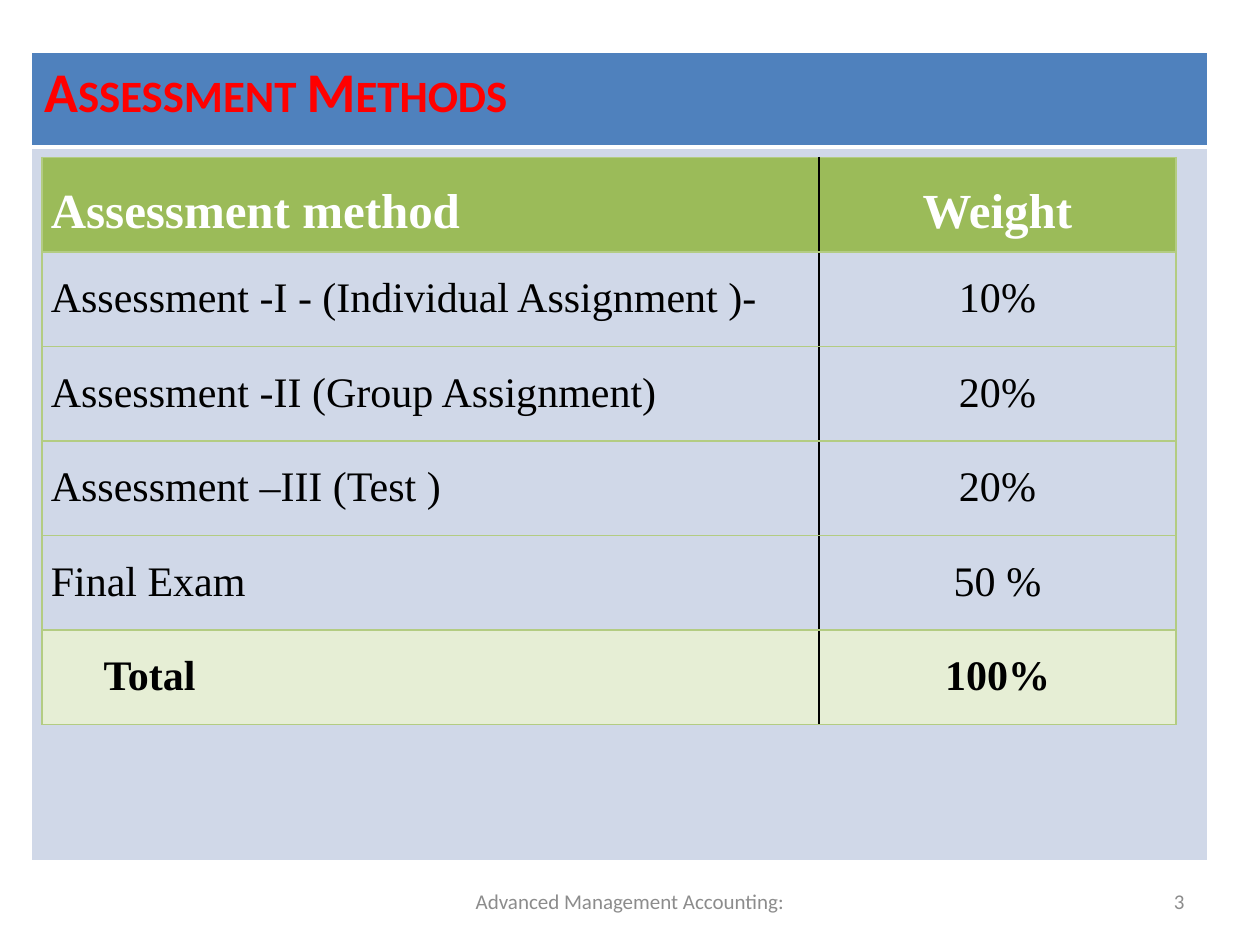
from collections import namedtuple

from lxml.etree import SubElement
from pptx import Presentation
from pptx.dml.color import RGBColor
from pptx.enum.text import MSO_ANCHOR as Anchor, PP_ALIGN as Align
from pptx.oxml.ns import qn
from pptx.util import Inches, Pt

WHITE = RGBColor(0xFF, 0xFF, 0xFF)
BLACK = RGBColor(0, 0, 0)
RED = RGBColor(0xFF, 0, 0)
GRAY = RGBColor(0x8C, 0x8C, 0x8C)
BLUE = RGBColor(0x4F, 0x81, 0xBD)
PALE_BLUE = RGBColor(0xD0, 0xD8, 0xE8)
GREEN = RGBColor(0x9B, 0xBB, 0x59)
PALE_GREEN = RGBColor(0xE6, 0xEE, 0xD5)
LINE_GREEN = RGBColor(0xB3, 0xCC, 0x82)

COLUMNS, ROWS = 120, 90
WIDTH, HEIGHT = Inches(10), Inches(7.5)
Box = namedtuple("Box", "left top width height")

WEIGHTS = [
    ("Assessment method", "Weight"),
    ("Assessment -I - (Individual Assignment )-", "10%"),
    ("Assessment -II (Group Assignment)", "20%"),
    ("Assessment –III (Test )", "20%"),
    ("Final Exam", "50 %"),
    ("Total", "100%"),
]


def across(columns):
    return round(WIDTH * columns / COLUMNS)


def down(rows):
    return round(HEIGHT * rows / ROWS)


def place(box):
    return across(box.left), down(box.top), across(box.width), down(box.height)


def write(frame, text, size=12, font="Calibri", color=BLACK, bold=False,
          align=Align.LEFT, spacing=None, indent=0, small_caps=False):
    paragraph = frame.paragraphs[0]
    paragraph.alignment = align
    paragraph.line_spacing = spacing
    if indent:
        paragraph._p.get_or_add_pPr().set("marL", str(Inches(indent)))
    run = paragraph.add_run()
    run.text = text
    run.font.size = Pt(size)
    run.font.name = font
    run.font.bold = bold
    run.font.color.rgb = color
    if small_caps:
        run.font._element.set("cap", "small")


def style_cell(cell, fill, borders):
    properties = cell._tc.get_or_add_tcPr()
    for side, (color, width) in zip("LRTB", borders):
        line = SubElement(properties, qn(f"a:ln{side}"), w=str(Pt(width)))
        solid = SubElement(line, qn("a:solidFill"))
        SubElement(solid, qn("a:srgbClr"), val=str(color))
    if fill is None:
        cell.fill.background()
    else:
        cell.fill.solid()
        cell.fill.fore_color.rgb = fill


def add_plain_table(slide, box, widths, heights):
    table = slide.shapes.add_table(len(heights), len(widths), *place(box)).table
    table.first_row = table.horz_banding = False
    for column, width in zip(table.columns, widths):
        column.width = across(width)
    for row, height in zip(table.rows, heights):
        row.height = down(height)
    return table


def add_title_panel(slide, box, title):
    title_height = 9
    table = add_plain_table(slide, box, [box.width],
                            [title_height, box.height - title_height])
    thin, thick = (WHITE, 1), (WHITE, 3)
    style_cell(table.cell(0, 0), BLUE, [thin, thin, thin, thick])
    style_cell(table.cell(1, 0), PALE_BLUE, [thin, thin, thick, thin])
    write(table.cell(0, 0).text_frame, title, size=32, color=RED, bold=True,
          small_caps=True)


def add_weight_table(slide, box, entries):
    method_width = 74
    last = len(entries) - 1
    table = add_plain_table(slide, box, [method_width, box.width - method_width],
                            [box.height / len(entries)] * len(entries))
    green, black = (LINE_GREEN, 1), (BLACK, 1)
    fills = {0: GREEN, last: PALE_GREEN}
    for row, entry in enumerate(entries):
        for column, text in enumerate(entry):
            cell = table.cell(row, column)
            cell.margin_left = cell.margin_right = Inches(0.07)
            cell.margin_top = cell.margin_bottom = 0
            sides = [black, green] if column else [green, black]
            style_cell(cell, fills.get(row), sides + [green, green])
            write(cell.text_frame, text, font="Times New Roman", spacing=1.5,
                  size=28 if row == 0 else 24,
                  color=WHITE if row == 0 else BLACK,
                  bold=row in fills,
                  align=Align.CENTER if column else Align.JUSTIFY,
                  indent=0.42 if (row, column) == (last, 0) else 0)


def add_footer_text(slide, box, text, align):
    frame = slide.shapes.add_textbox(*place(box)).text_frame
    frame.word_wrap = True
    frame.vertical_anchor = Anchor.MIDDLE
    write(frame, text, color=GRAY, align=align)


def main():
    presentation = Presentation()
    presentation.slide_width, presentation.slide_height = WIDTH, HEIGHT
    slide = presentation.slides.add_slide(presentation.slide_layouts[6])
    footer_top, footer_height = 83.4, 4.8
    add_footer_text(slide, Box(41, footer_top, 38, footer_height),
                    "Advanced Management Accounting:", Align.CENTER)
    add_footer_text(slide, Box(86, footer_top, 28, footer_height), "3", Align.RIGHT)
    add_title_panel(slide, Box(3, 5, 112, 77), "Assessment Methods")
    add_weight_table(slide, Box(4, 15, 108, 54), WEIGHTS)
    presentation.save("out.pptx")


if __name__ == "__main__":
    main()
